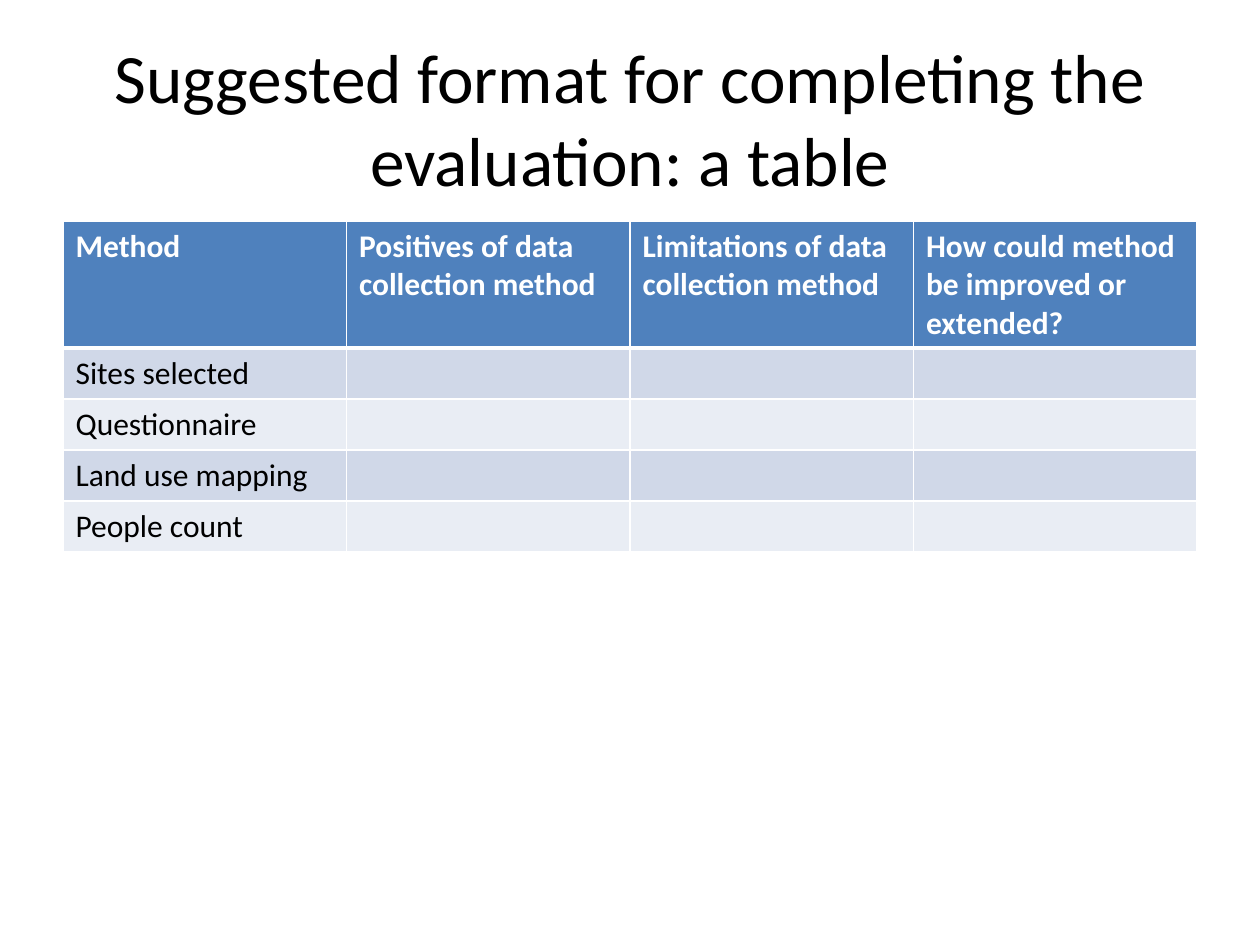
from lxml.etree import SubElement
from pptx import Presentation
from pptx.dml.color import RGBColor
from pptx.enum.text import MSO_ANCHOR, PP_ALIGN
from pptx.oxml.ns import qn
from pptx.util import Pt

EMU_PER_PX = 914400 / 126
FONT = "Calibri"
COLORS = {
    "text": "000000",
    "header_text": "FFFFFF",
    "header": "4F81BD",
    "band_dark": "D0D8E8",
    "band_light": "E9EDF4",
    "border": "FFFFFF",
}
TITLE = "Suggested format for completing the evaluation: a table"
HEADINGS = [
    "Method",
    "Positives of data collection method",
    "Limitations of data collection method",
    "How could method be improved or extended?",
]
METHODS = ["Sites selected", "Questionnaire", "Land use mapping", "People count"]


def px(length):
    return round(length * EMU_PER_PX)


def color(name):
    return RGBColor.from_string(COLORS[name])


def format_text(frame, size, color_name, bold=False):
    for para in frame.paragraphs:
        for span in para.runs:
            span.font.name = FONT
            span.font.size = Pt(size)
            span.font.bold = bold
            span.font.color.rgb = color(color_name)


def add_title(page, text, left, top, width, height):
    box = page.shapes.add_textbox(px(left), px(top), px(width), px(height))
    frame = box.text_frame
    frame.word_wrap = True
    frame.vertical_anchor = MSO_ANCHOR.MIDDLE
    frame.text = text
    frame.paragraphs[0].alignment = PP_ALIGN.CENTER
    format_text(frame, 39.6, "text")


def set_borders(cell, top, bottom):
    """Draw all four cell edges; top and bottom are widths in points."""
    properties = cell._tc.get_or_add_tcPr()
    for edge, width in (("L", 1), ("R", 1), ("T", top), ("B", bottom)):
        line = SubElement(properties, qn(f"a:ln{edge}"), w=str(Pt(width)))
        fill = SubElement(line, qn("a:solidFill"))
        SubElement(fill, qn("a:srgbClr"), val=COLORS["border"])


def style_cell(cell, row):
    is_header = row == 0
    set_borders(cell, top=3 if row == 1 else 1, bottom=3 if is_header else 1)
    band = "band_dark" if row % 2 else "band_light"
    cell.fill.solid()
    cell.fill.fore_color.rgb = color("header" if is_header else band)
    text_color = "header_text" if is_header else "text"
    format_text(cell.text_frame, 18, text_color, bold=is_header)


def add_method_table(page, left, top, width, header_height, row_height):
    row_count, column_count = len(METHODS) + 1, len(HEADINGS)
    height = header_height + row_height * len(METHODS)
    table = page.shapes.add_table(
        row_count, column_count, px(left), px(top), px(width), px(height)
    ).table
    for row in range(row_count):
        table.rows[row].height = px(row_height if row else header_height)
    for column, heading in enumerate(HEADINGS):
        table.cell(0, column).text = heading
    for row, method in enumerate(METHODS, start=1):
        table.cell(row, 0).text = method
    for row in range(row_count):
        for column in range(column_count):
            style_cell(table.cell(row, column), row)


def main():
    deck = Presentation()
    deck.slide_width, deck.slide_height = px(1260), px(945)
    page = deck.slides.add_slide(deck.slide_layouts[6])
    add_title(page, TITLE, left=63, top=38, width=1134, height=158)
    add_method_table(
        page, left=63, top=221, width=1134, header_height=127, row_height=51
    )
    deck.save("out.pptx")


if __name__ == "__main__":
    main()
